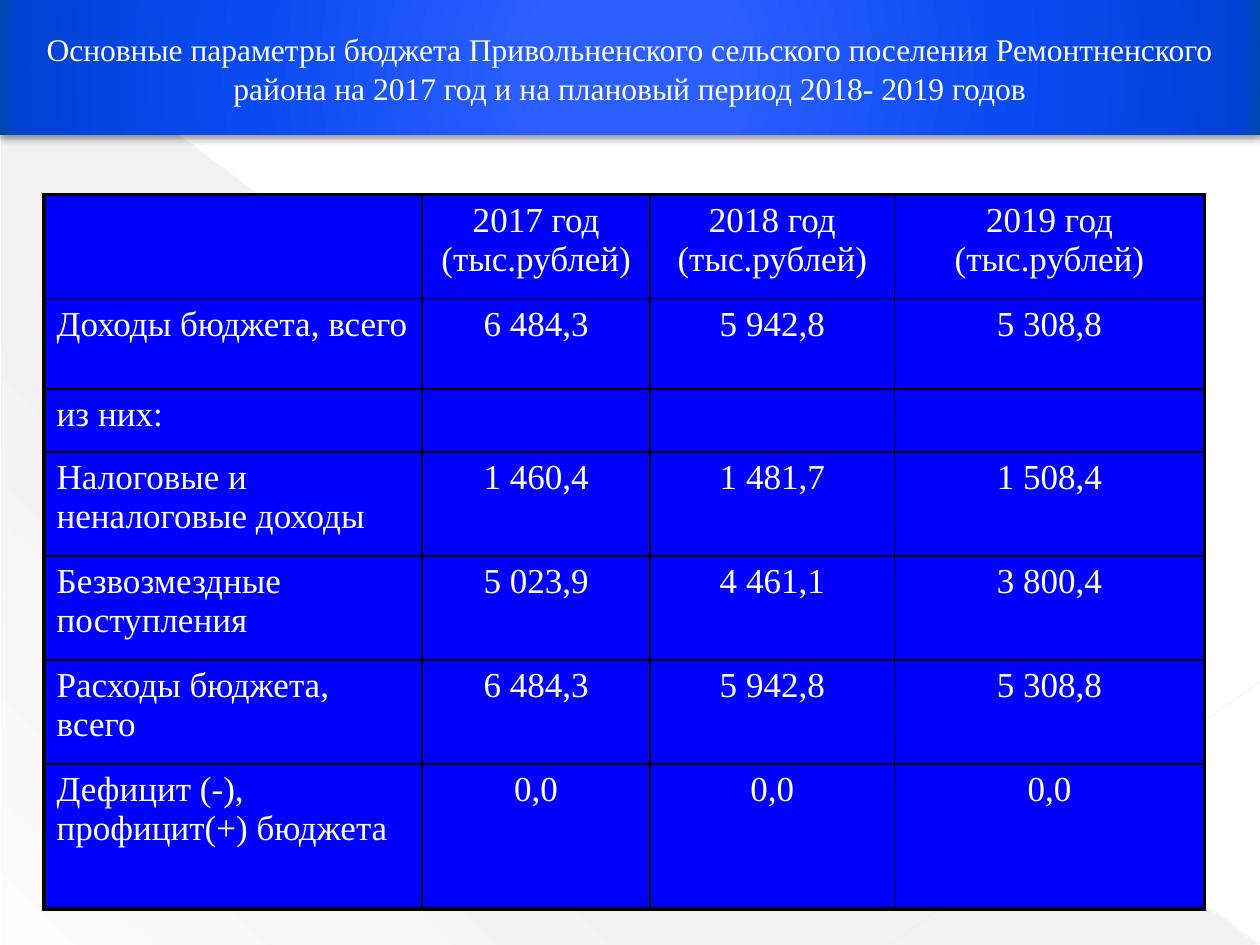
import pptx
import pptx.dml.color
import pptx.enum.shapes
import pptx.enum.text
import pptx.oxml
import pptx.oxml.ns
import pptx.util
from lxml import etree

Pt = pptx.util.Pt
ALIGN = pptx.enum.text.PP_ALIGN
SHAPE = pptx.enum.shapes.MSO_SHAPE

SLIDE_W, SLIDE_H = 720, 540
WHITE, BLACK, CELL_BLUE = "FFFFFF", "000000", "0000FF"
BANNER_STOPS = [(0, "2D60FF", 100), (15, "2C5FFF", 100), (62, "094AF1", 100),
                (97, "0042D3", 100), (100, "004AAB", 100)]
SHADE_STOPS = [(0, "666666", 10), (70, "666666", 8), (100, "666666", 1)]
RADIAL = ('<a:path path="circle">'
          '<a:fillToRect l="50000" t="50000" r="50000" b="50000"/></a:path>')
DIAGONAL = '<a:lin ang="7980000" scaled="0"/>'

TITLE = ("Основные параметры бюджета Привольненского сельского поселения "
         "Ремонтненского района на 2017 год и на плановый период 2018- 2019 годов")
BUDGET = [
    ("", "2017 год (тыс.рублей)", "2018 год (тыс.рублей)", "2019 год (тыс.рублей)"),
    ("Доходы бюджета, всего", "6 484,3", "5 942,8", "5 308,8"),
    ("из них:", "", "", ""),
    ("Налоговые и неналоговые доходы", "1 460,4", "1 481,7", "1 508,4"),
    ("Безвозмездные поступления", "5 023,9", "4 461,1", "3 800,4"),
    ("Расходы бюджета, всего", "6 484,3", "5 942,8", "5 308,8"),
    ("Дефицит (-), профицит(+) бюджета", "0,0", "0,0", "0,0"),
]
COLUMN_WIDTHS = [216, 130.3, 139.7, 177.1]
ROW_HEIGHTS = [59.4, 51.6, 36.2, 59.4, 59.4, 59.4, 82.8]


def rgb(value):
    return pptx.dml.color.RGBColor.from_string(value)


def drawing_xml(tag, inner="", attributes=""):
    return pptx.oxml.parse_xml(
        f'<a:{tag} {pptx.oxml.ns.nsdecls("a")} {attributes}>{inner}</a:{tag}>')


def color_xml(color, opacity=100):
    return f'<a:srgbClr val="{color}"><a:alpha val="{opacity * 1000}"/></a:srgbClr>'


def write_text(frame, text, size=20, color=WHITE, align=ALIGN.LEFT,
               font="Times New Roman", spacing=None):
    paragraph = frame.paragraphs[0]
    paragraph.alignment = align
    paragraph.line_spacing = spacing
    run = paragraph.add_run()
    run.text = text
    run.font.size = Pt(size)
    run.font.name = font
    run.font.bold = False
    run.font.color.rgb = rgb(color)


def fill_gradient(shape, stops, direction):
    shape.fill.background()
    shape.line.fill.background()
    stop_list = "".join(f'<a:gs pos="{position * 1000}">{color_xml(color, opacity)}</a:gs>'
                        for position, color, opacity in stops)
    properties = shape.element.spPr
    empty_fill = properties.find(pptx.oxml.ns.qn("a:noFill"))
    properties.replace(empty_fill, drawing_xml(
        "gradFill", f"<a:gsLst>{stop_list}</a:gsLst>{direction}", 'rotWithShape="1"'))
    shape.shadow.inherit = False


def add_drop_shadow(shape):
    effects = shape.element.spPr.find(pptx.oxml.ns.qn("a:effectLst"))
    effects.append(drawing_xml("outerShdw", color_xml(BLACK, 43),
                               'blurRad="63500" dist="25400" dir="5400000"'))


def add_faint_line(slide, start, end, color, width, opacity):
    line = slide.shapes.add_connector(
        pptx.enum.shapes.MSO_CONNECTOR.STRAIGHT, *map(Pt, start + end))
    line.line.color.rgb = rgb(color)
    line.line.width = Pt(width)
    stroke_color = next(line.element.spPr.iter(pptx.oxml.ns.qn("a:srgbClr")))
    etree.SubElement(stroke_color, pptx.oxml.ns.qn("a:alpha"), val=str(opacity * 1000))
    line.element.spPr.append(drawing_xml("effectLst"))


def add_backdrop(slide):
    corner = slide.shapes.add_shape(SHAPE.RIGHT_TRIANGLE, Pt(0.7), Pt(1.4),
                                    Pt(718.6), Pt(538.6))
    fill_gradient(corner, SHADE_STOPS, DIAGONAL)
    add_faint_line(slide, (0, 0.7), (719.3, 539.3), "E8E8E8", 0.39, 35)
    add_faint_line(slide, (SLIDE_W, 389.5), (509, 539.3), "EAEAEA", 0.47, 45)
    strip = slide.shapes.add_shape(SHAPE.RECTANGLE, 0, 0, Pt(SLIDE_W), Pt(33.8))
    fill_gradient(strip, BANNER_STOPS, RADIAL)
    add_drop_shadow(strip)


def add_banner_title(slide):
    """Turn the title placeholder into the banner, in front of the backdrop."""
    banner = slide.shapes.title
    banner.left, banner.top = 0, 0
    banner.width, banner.height = Pt(SLIDE_W), Pt(77)
    fill_gradient(banner, BANNER_STOPS, RADIAL)
    add_drop_shadow(banner)
    banner.text_frame.vertical_anchor = pptx.enum.text.MSO_ANCHOR.MIDDLE
    write_text(banner.text_frame, TITLE, size=18, align=ALIGN.CENTER, spacing=1.05)
    banner.element.getparent().append(banner.element)


def set_borders(cell, widths):
    """Put the borders, given by side, ahead of the cell's fill."""
    properties = cell._tc.get_or_add_tcPr()
    for index, (side, width) in enumerate(widths.items()):
        properties.insert(index, drawing_xml(
            f"ln{side}", f"<a:solidFill>{color_xml(BLACK)}</a:solidFill>",
            f'w="{Pt(width)}"'))


def add_budget_table(slide):
    rows, columns = len(BUDGET), len(COLUMN_WIDTHS)
    table = slide.shapes.add_table(rows, columns, Pt(25.2), Pt(111.2),
                                   Pt(sum(COLUMN_WIDTHS)), Pt(sum(ROW_HEIGHTS))).table
    for column, width in zip(table.columns, COLUMN_WIDTHS):
        column.width = Pt(width)
    for row, height in zip(table.rows, ROW_HEIGHTS):
        row.height = Pt(height)
    for r, entries in enumerate(BUDGET):
        for c, entry in enumerate(entries):
            cell = table.cell(r, c)
            cell.fill.solid()
            cell.fill.fore_color.rgb = rgb(CELL_BLUE)
            outer = {"L": c == 0, "R": c == columns - 1, "T": r == 0, "B": r == rows - 1}
            set_borders(cell, {side: 2.25 if edge else 1 for side, edge in outer.items()})
            if entry:
                write_text(cell.text_frame, entry,
                           align=ALIGN.CENTER if c else ALIGN.LEFT)


def main():
    presentation = pptx.Presentation()
    presentation.slide_width, presentation.slide_height = Pt(SLIDE_W), Pt(SLIDE_H)
    slide = presentation.slides.add_slide(presentation.slide_layouts[5])
    add_backdrop(slide)
    add_banner_title(slide)
    add_budget_table(slide)
    presentation.save("out.pptx")


if __name__ == "__main__":
    main()
